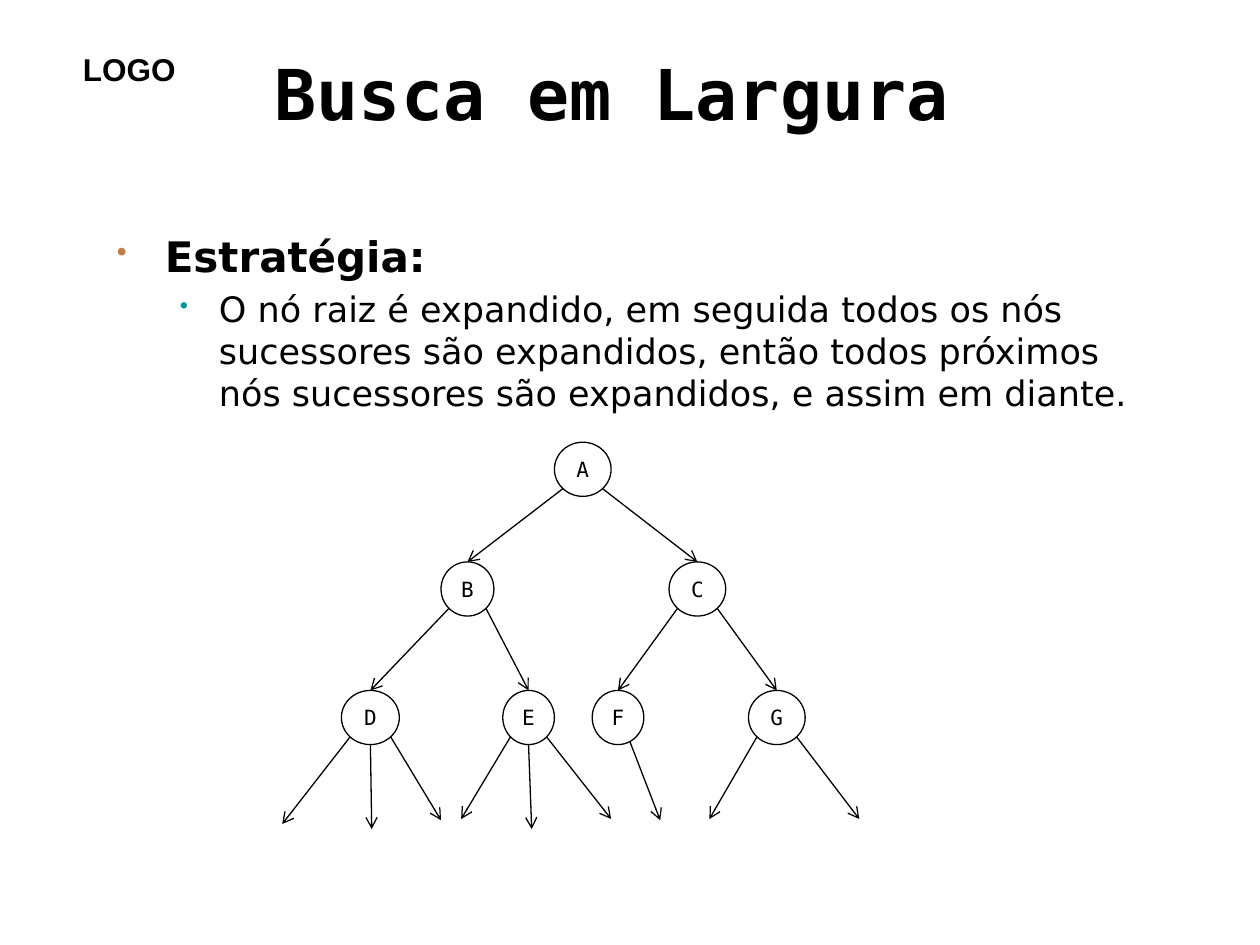
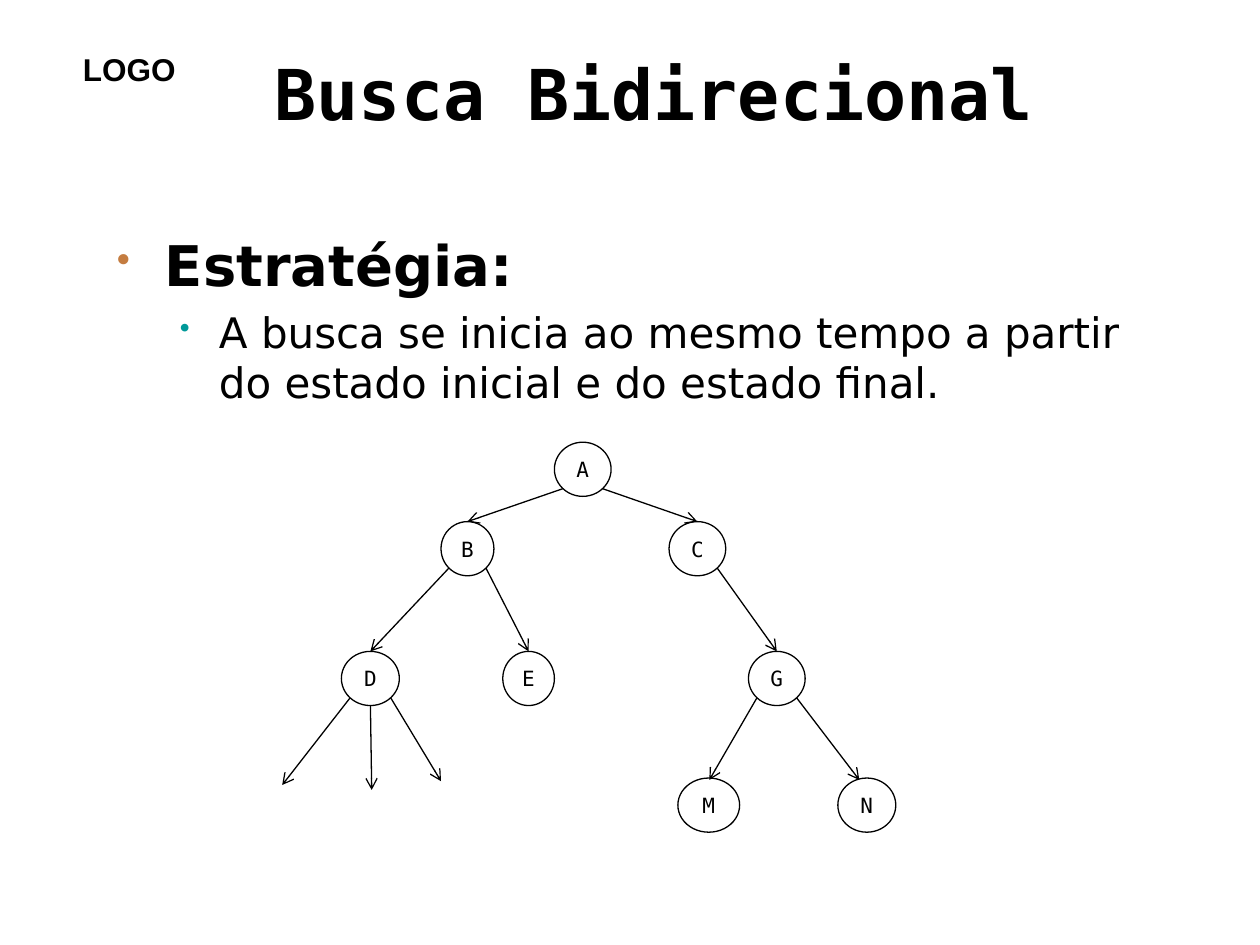
from math import sqrt

from lxml import etree
from pptx import Presentation
from pptx.dml.color import RGBColor
from pptx.enum.shapes import MSO_CONNECTOR, MSO_SHAPE
from pptx.enum.text import MSO_ANCHOR, MSO_AUTO_SIZE, PP_ALIGN
from pptx.oxml.ns import qn
from pptx.util import Inches, Pt

STRAIGHT, ELLIPSE = MSO_CONNECTOR.STRAIGHT, MSO_SHAPE.OVAL
MIDDLE, LEFT, CENTER = MSO_ANCHOR.MIDDLE, PP_ALIGN.LEFT, PP_ALIGN.CENTER
NO_AUTOFIT = MSO_AUTO_SIZE.NONE

COLORS = {"ink": "000000", "paper": "FFFFFF", "bullet": "C47C40", "sub_bullet": "009999"}
SANS, MONO, LOGO_FONT = "DejaVu Sans", "DejaVu Sans Mono", "Arial"

presentation = Presentation()
presentation.slide_width, presentation.slide_height = Inches(10), Inches(7.5)
# The grid has 100 columns and 75 rows of square cells
COLUMN = presentation.slide_width // 100
ROW = presentation.slide_height // 75

# Tree: node name -> (level, centre column, width in columns)
NODES = {
    "A": (0, 46.25, 4.5),
    "B": (1, 37.1, 4.2), "C": (1, 55.35, 4.5),
    "D": (2, 29.4, 4.6), "E": (2, 41.95, 4.1), "F": (2, 49.05, 4.1), "G": (2, 61.65, 4.5),
    "M": (3, 56.25, 4.9), "N": (3, 68.8, 4.6),
}
NODE_HEIGHT = 4.3
# Arrows leave a node at a share of its half width, left or right of its centre
SIDE = 0.7
EDGES = [("A", "B", -SIDE), ("A", "C", SIDE), ("B", "D", -SIDE),
         ("B", "E", SIDE), ("C", "F", -SIDE), ("C", "G", SIDE)]
# Open arrows: (share, columns from the node's centre, rows from its top)
PAIR = [(-SIDE, -5.35, 10.2), (SIDE, 6.55, 10.2)]
OPEN_ARROWS = {
    "D": [(-SIDE, -7, 10.6), (0, 0.1, 11), (SIDE, 5.6, 10.3)],
    "E": PAIR + [(0, 0.25, 11)],
    "F": [(0.46, 3.35, 10.3)],
    "G": PAIR,
}

SLIDES = [
    {"title": "Busca em Largura", "sizes": (24, 20),
     "strategy": "O nó raiz é expandido, em seguida todos os nós sucessores são expandidos, "
                 "então todos próximos nós sucessores são expandidos, e assim em diante.",
     "nodes": "ABCDEFG", "open": "DEFG", "level_rows": (35.1, 44.6, 54.8)},
    {"title": "Busca Bidirecional", "sizes": (32, 24),
     "strategy": "A busca se inicia ao mesmo tempo a partir do estado inicial e do estado final.",
     "nodes": "ABCDEGMN", "open": "DG", "level_rows": (35.1, 41.4, 51.7, 61.75)},
]


def format_text(paragraph, font_name, size, bold=False, alignment=LEFT):
    paragraph.alignment = alignment
    for run in paragraph.runs:
        run.font.name, run.font.size, run.font.bold = font_name, Pt(size), bold
        run.font.color.rgb = RGBColor.from_string(COLORS["ink"])


def add_arrow(slide, parent, share, end_column, end_row):
    """Draw an arrow from the lower rim of a parent node."""
    level, center, width = NODES[parent]
    start_column = center + share * width / 2
    start_row = level_rows[level] + NODE_HEIGHT / 2 * (1 + sqrt(1 - share ** 2))
    arrow = slide.shapes.add_connector(
        STRAIGHT, int(start_column * COLUMN), int(start_row * ROW),
        int(end_column * COLUMN), int(end_row * ROW))
    arrow.line.color.rgb = RGBColor.from_string(COLORS["ink"])
    arrow.line.width = Pt(0.75)
    etree.SubElement(arrow.line._get_or_add_ln(), qn("a:tailEnd"), type="arrow")
    etree.SubElement(arrow._element.spPr, qn("a:effectLst"))
    return arrow


for content in SLIDES:
    slide = presentation.slides.add_slide(presentation.slide_layouts[5])
    level_rows = content["level_rows"]

    # Logo text
    logo = slide.shapes.add_textbox(int(5.6 * COLUMN), int(3.5 * ROW), int(9.4 * COLUMN), 4 * ROW)
    logo.text_frame.text = "LOGO"
    format_text(logo.text_frame.paragraphs[0], LOGO_FONT, 18, bold=True)

    # Title
    title = slide.shapes.title
    title.left, title.top = int(20.8 * COLUMN), int(2.5 * ROW)
    title.width, title.height = int(74.2 * COLUMN), int(9.7 * ROW)
    title.text_frame.text = content["title"]
    title.text_frame.auto_size = NO_AUTOFIT
    title.text_frame.vertical_anchor = MIDDLE
    format_text(title.text_frame.paragraphs[0], MONO, 40, bold=True)

    # Strategy bullets
    body = slide.shapes.add_textbox(
        int(8.3 * COLUMN), int(17.8 * ROW), int(82.7 * COLUMN), int(44.9 * ROW))
    body.text_frame.word_wrap = True
    body.text_frame.text = "Estratégia:\n" + content["strategy"]
    bullet_styles = [("bullet", 0.38, 0.38), ("sub_bullet", 0.81, 0.31)]
    for level, (color, margin, hanging) in enumerate(bullet_styles):
        paragraph = body.text_frame.paragraphs[level]
        paragraph.level = level
        properties = paragraph._p.get_or_add_pPr()
        properties.set("marL", str(Inches(margin)))
        properties.set("indent", str(-Inches(hanging)))
        bullet_color = etree.SubElement(properties, qn("a:buClr"))
        etree.SubElement(bullet_color, qn("a:srgbClr"), val=COLORS[color])
        etree.SubElement(properties, qn("a:buSzPct"), val="70000")
        etree.SubElement(properties, qn("a:buChar"), char="•")
        size = content["sizes"][level]
        paragraph.space_before = Pt(0.2 * size * level)
        format_text(paragraph, SANS, size, bold=level == 0)

    # Tree nodes
    node_shapes = {}
    for name in content["nodes"]:
        level, center, width = NODES[name]
        node = slide.shapes.add_shape(
            ELLIPSE, int((center - width / 2) * COLUMN), int(level_rows[level] * ROW),
            int(width * COLUMN), int(NODE_HEIGHT * ROW))
        node.shadow.inherit = False
        node.fill.solid()
        node.fill.fore_color.rgb = RGBColor.from_string(COLORS["paper"])
        node.line.color.rgb = RGBColor.from_string(COLORS["ink"])
        node.line.width = Pt(0.75)
        node.text_frame.text = name
        node.text_frame.word_wrap = False
        node.text_frame.vertical_anchor = MIDDLE
        format_text(node.text_frame.paragraphs[0], MONO, 12, alignment=CENTER)
        node_shapes[name] = node

    # Arrows between nodes
    for parent, child, share in EDGES:
        if child in node_shapes:
            level, center, width = NODES[child]
            arrow = add_arrow(slide, parent, share, center, level_rows[level])
            arrow.end_connect(node_shapes[child], 0)

    # Arrows towards the next level
    for parent in content["open"]:
        level, center, width = NODES[parent]
        for share, columns, rows in OPEN_ARROWS[parent]:
            add_arrow(slide, parent, share, center + columns, level_rows[level] + rows)

presentation.save("out.pptx")
